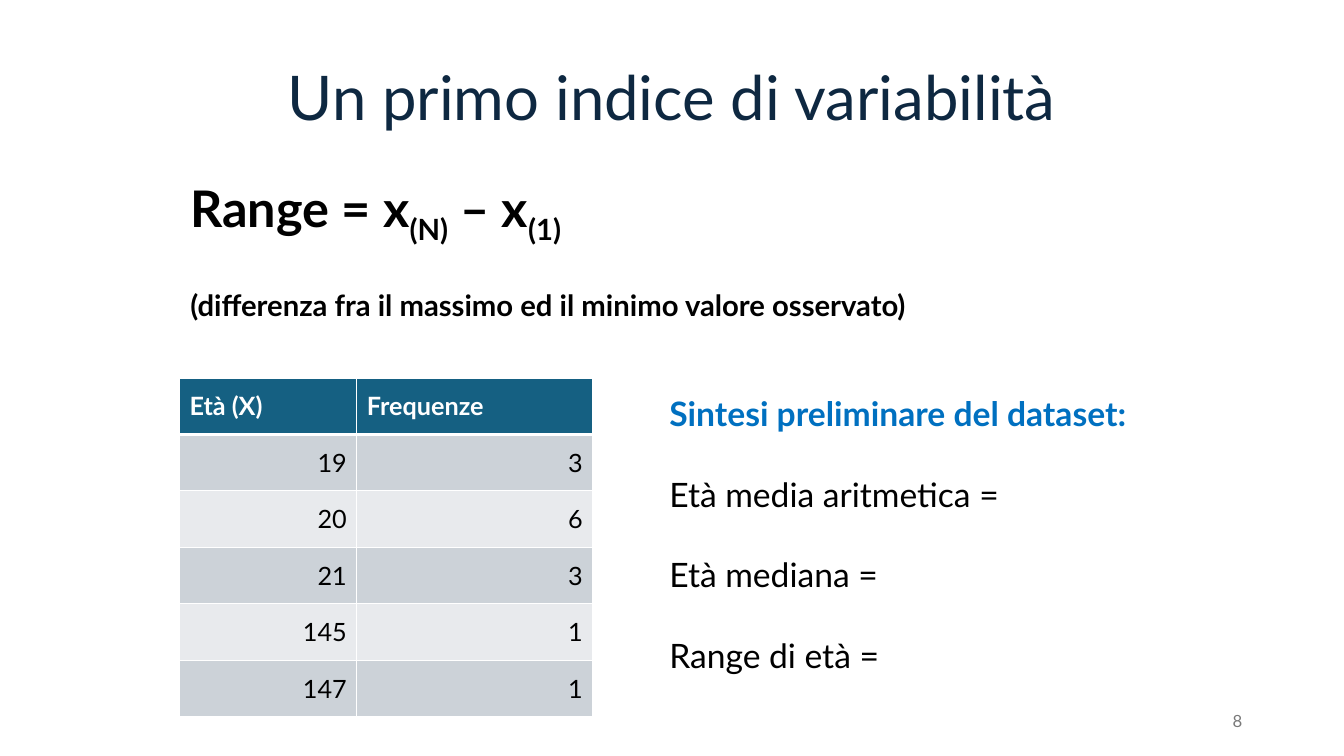
from dataclasses import dataclass

from lxml.etree import SubElement
from pptx import Presentation
from pptx.dml.color import RGBColor
from pptx.enum.text import MSO_ANCHOR, PP_ALIGN
from pptx.oxml.ns import qn
from pptx.util import Inches, Pt

FONT = "Lato"
NAVY = RGBColor(0x0E, 0x28, 0x41)
BLACK = RGBColor(0, 0, 0)
WHITE = RGBColor(0xFF, 0xFF, 0xFF)
GREY = RGBColor(0x79, 0x79, 0x79)
BLUE = RGBColor(0x00, 0x70, 0xC0)
TEAL = RGBColor(0x15, 0x60, 0x82)
BANDS = (RGBColor(0xCC, 0xD2, 0xD8), RGBColor(0xE8, 0xEA, 0xED))

FREQUENCIES = (("Età (X)", "Frequenze"), ("19", "3"), ("20", "6"),
               ("21", "3"), ("145", "1"), ("147", "1"))
COLUMN_WIDTHS = (1.76, 2.34)
ROW_HEIGHT = 0.56


@dataclass
class Run:
    text: str
    size: float
    color: RGBColor = BLACK
    bold: bool = False
    subscript: bool = False


@dataclass
class Para:
    runs: list[Run]
    align: PP_ALIGN = PP_ALIGN.LEFT
    before: float = 0
    spacing: float = 1.0


@dataclass
class Block:
    left: float
    top: float
    width: float
    height: float
    paras: list[Para]
    anchor: MSO_ANCHOR = MSO_ANCHOR.TOP
    wrap: bool = True


def fill_para(p, para: Para) -> None:
    p.alignment = para.align
    p.space_before = Pt(para.before)
    p.line_spacing = para.spacing
    for run in para.runs:
        r = p.add_run()
        r.text = run.text
        r.font.name = FONT
        r.font.size = Pt(run.size)
        r.font.bold = run.bold
        r.font.color.rgb = run.color
        if run.subscript:
            r.font._element.set("baseline", "-25000")


def add_block(s, block: Block) -> None:
    sp = s.shapes.add_textbox(Inches(block.left), Inches(block.top),
                              Inches(block.width), Inches(block.height))
    tf = sp.text_frame
    tf.word_wrap = block.wrap
    tf.vertical_anchor = block.anchor
    for i, para in enumerate(block.paras):
        fill_para(tf.add_paragraph() if i else tf.paragraphs[0], para)


def set_borders(cell, top: float, bottom: float) -> None:
    """Draw white cell borders; widths are in points."""
    tc_pr = cell._tc.get_or_add_tcPr()
    widths = {"a:lnL": 1, "a:lnR": 1, "a:lnT": top, "a:lnB": bottom}
    for i, (tag, width) in enumerate(widths.items()):
        ln = SubElement(tc_pr, qn(tag), w=str(Pt(width)))
        fill = SubElement(ln, qn("a:solidFill"))
        SubElement(fill, qn("a:srgbClr"), val=str(WHITE))
        tc_pr.insert(i, ln)


def add_frequency_table(s, left: float, top: float) -> None:
    rows = len(FREQUENCIES)
    table = s.shapes.add_table(
        rows, len(COLUMN_WIDTHS), Inches(left), Inches(top),
        Inches(sum(COLUMN_WIDTHS)), Inches(rows * ROW_HEIGHT)).table
    for column, width in zip(table.columns, COLUMN_WIDTHS):
        column.width = Inches(width)
    for i, values in enumerate(FREQUENCIES):
        table.rows[i].height = Inches(ROW_HEIGHT)
        header = i == 0
        for j, value in enumerate(values):
            cell = table.cell(i, j)
            cell.vertical_anchor = MSO_ANCHOR.MIDDLE
            cell.fill.solid()
            cell.fill.fore_color.rgb = TEAL if header else BANDS[(i - 1) % 2]
            set_borders(cell, top=3 if i == 1 else 1, bottom=3 if header else 1)
            run = Run(value, 18, WHITE if header else BLACK, bold=header)
            align = PP_ALIGN.LEFT if header else PP_ALIGN.RIGHT
            fill_para(cell.text_frame.paragraphs[0], Para([run], align))


def main() -> None:
    prs = Presentation()
    prs.slide_width, prs.slide_height = Inches(13.33), Inches(7.5)
    s = prs.slides.add_slide(prs.slide_layouts[6])

    title = Para([Run("Un primo indice di variabilità", 44, NAVY)],
                 PP_ALIGN.CENTER, spacing=0.9)
    formula = Para([Run("Range = x", 36, bold=True),
                    Run("(N)", 36, bold=True, subscript=True),
                    Run(" – x", 36, bold=True),
                    Run("(1)", 36, bold=True, subscript=True)],
                   before=10, spacing=0.9)
    meaning = Para([Run("(differenza fra il massimo ed il minimo valore osservato)",
                        36, bold=True, subscript=True)],
                   before=10, spacing=0.9)
    summary = [Para([Run("Sintesi preliminare del dataset:", 24, BLUE, bold=True)])]
    summary += [Para([Run(f"{name} =", 24)], before=28.8)
                for name in ("Età media aritmetica", "Età mediana", "Range di età")]
    page_number = Para([Run("8", 12, GREY)], PP_ALIGN.RIGHT)

    add_block(s, Block(0, 0.3, 13.33, 1.4, [title], MSO_ANCHOR.MIDDLE))
    add_block(s, Block(1.79, 1.72, 9.75, 1.96, [formula, meaning]))
    add_block(s, Block(9.42, 6.95, 3, 0.4, [page_number], MSO_ANCHOR.MIDDLE))
    add_frequency_table(s, 1.78, 3.75)
    add_block(s, Block(6.54, 3.85, 5.15, 2.93, summary, wrap=False))

    prs.save("out.pptx")


if __name__ == "__main__":
    main()
